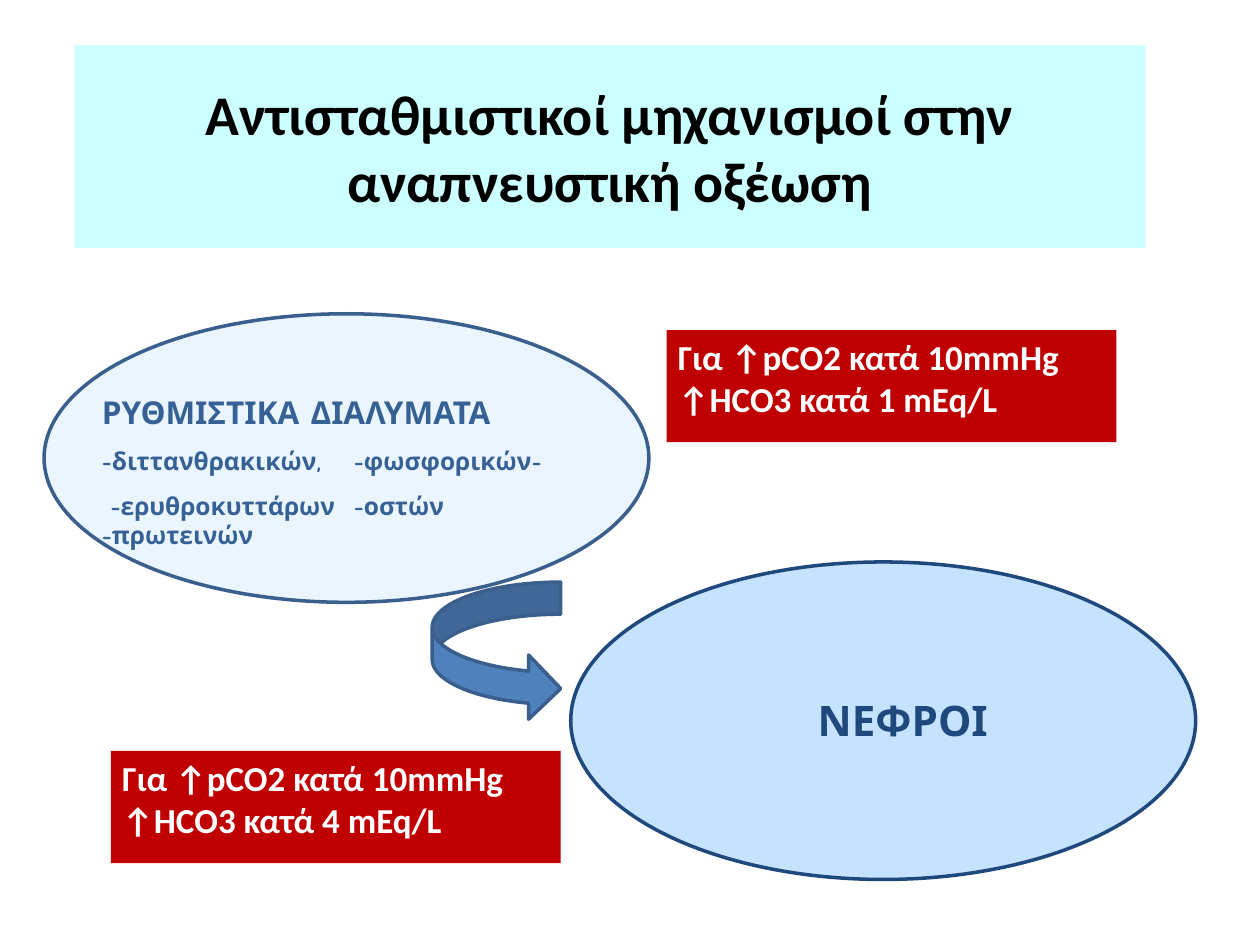
import pptx
import pptx.dml.color
import pptx.enum.shapes
import pptx.enum.text
import pptx.oxml
import pptx.oxml.ns
import pptx.util
from pptx.dml.color import RGBColor
from pptx.enum.shapes import MSO_SHAPE
from pptx.enum.text import MSO_ANCHOR, PP_ALIGN
from pptx.util import Inches

BLACK = RGBColor(0x00, 0x00, 0x00)
WHITE = RGBColor(0xFF, 0xFF, 0xFF)
PALE_CYAN = RGBColor(0xCC, 0xFF, 0xFF)
SKY = RGBColor(0x99, 0xCC, 0xFF)
NAVY = RGBColor(0x1F, 0x49, 0x7D)
STEEL = RGBColor(0x3A, 0x5F, 0x8C)
BLUE = RGBColor(0x4F, 0x81, 0xBD)
RED = RGBColor(0xC0, 0x00, 0x00)


class SlideBuilder:
    main_font = "Calibri"
    label_font = "Comic Neue"
    outline_width = pptx.util.Pt(2)

    def __init__(self, deck):
        self.page = deck.slides.add_slide(deck.slide_layouts[5])

    def format_runs(self, para, font, size, color):
        for span in para.runs:
            span.font.name = font
            span.font.size = pptx.util.Pt(size)
            span.font.bold = True
            span.font.color.rgb = color

    def title(self, text, left, top, width, height):
        box = self.page.shapes.title
        box.left, box.top = Inches(left), Inches(top)
        box.width, box.height = Inches(width), Inches(height)
        box.fill.solid()
        box.fill.fore_color.rgb = PALE_CYAN
        box.text_frame.text = text
        box.text_frame.vertical_anchor = MSO_ANCHOR.MIDDLE
        para = box.text_frame.paragraphs[0]
        para.alignment = PP_ALIGN.CENTER
        self.format_runs(para, self.main_font, 32, BLACK)

    def shape(self, kind, left, top, width, height, fill, outline=None, opacity=100):
        box = self.page.shapes.add_shape(
            kind, Inches(left), Inches(top), Inches(width), Inches(height))
        box.shadow.inherit = False
        box.fill.solid()
        box.fill.fore_color.rgb = fill
        if opacity < 100:
            color = box.fill._xPr.find(".//" + pptx.oxml.ns.qn("a:srgbClr"))
            alpha = pptx.oxml.parse_xml(
                f'<a:alpha {pptx.oxml.ns.nsdecls("a")} val="{opacity * 1000}"/>')
            color.append(alpha)
        if outline is None:
            box.line.fill.background()
        else:
            box.line.color.rgb = outline
            box.line.width = self.outline_width
        return box

    def label(self, lines, left, top, width, height, alignment=PP_ALIGN.LEFT):
        box = self.page.shapes.add_textbox(
            Inches(left), Inches(top), Inches(width), Inches(height))
        frame = box.text_frame
        frame.word_wrap = True
        frame.text = "\n".join(text for text, size in lines)
        for para, (text, size) in zip(frame.paragraphs, lines):
            para.alignment = alignment
            para.space_before = pptx.util.Pt(11.2 if size > 14 else 8.8)
            self.format_runs(para, self.label_font, size, NAVY)
        return frame

    def tab_stop(self, para, position, indent=0):
        properties = para._p.get_or_add_pPr()
        properties.set("indent", str(Inches(indent)))
        properties.append(pptx.oxml.parse_xml(
            f'<a:tabLst {pptx.oxml.ns.nsdecls("a")}>'
            f'<a:tab pos="{Inches(position)}" algn="l"/></a:tabLst>'))

    def rule(self, bicarbonate, left, top):
        box = self.shape(MSO_SHAPE.RECTANGLE, left, top, 3.57, 0.89, RED)
        frame = box.text_frame
        frame.margin_left = frame.margin_right = Inches(0.09)
        frame.margin_top = frame.margin_bottom = Inches(0.04)
        frame.vertical_anchor = MSO_ANCHOR.TOP
        frame.text = f"Για ↑pCO2 κατά 10mmHg\n↑HCO3 κατά {bicarbonate} mEq/L"
        for para in frame.paragraphs:
            para.alignment = PP_ALIGN.LEFT
            self.format_runs(para, self.main_font, 20, WHITE)


def main():
    deck = pptx.Presentation()
    deck.slide_width, deck.slide_height = Inches(10), Inches(7.5)
    builder = SlideBuilder(deck)
    builder.title("Aντισταθμιστικοί μηχανισμοί στην αναπνευστική οξέωση",
                  0.59, 0.36, 8.5, 1.61)
    builder.shape(MSO_SHAPE.OVAL, 4.53, 4.46, 4.96, 2.52, SKY, NAVY, 57)
    builder.label([("ΝΕΦΡΟΙ", 24)], 5.71, 5.46, 2.91, 0.51, PP_ALIGN.CENTER)
    buffers = builder.label([
        ("ΡΥΘΜΙΣΤΙΚΑ ΔΙΑΛΥΜΑΤΑ", 18),
        ("-διττανθρακικών,\t-φωσφορικών-", 14),
        ("-ερυθροκυττάρων\t-οστών\v-πρωτεινών", 14),
    ], 0.71, 3.07, 4.09, 1.13)
    builder.tab_stop(buffers.paragraphs[1], 2.02)
    builder.tab_stop(buffers.paragraphs[2], 2, 0.07)
    builder.shape(MSO_SHAPE.OVAL, 0.35, 2.49, 4.8, 2.29, SKY, STEEL, 19)
    builder.shape(MSO_SHAPE.CURVED_RIGHT_ARROW, 3.43, 4.62, 1.02, 1.1, BLUE, STEEL)
    builder.rule(1, 5.29, 2.62)
    builder.rule(4, 0.88, 5.96)
    deck.save("out.pptx")


if __name__ == "__main__":
    main()
